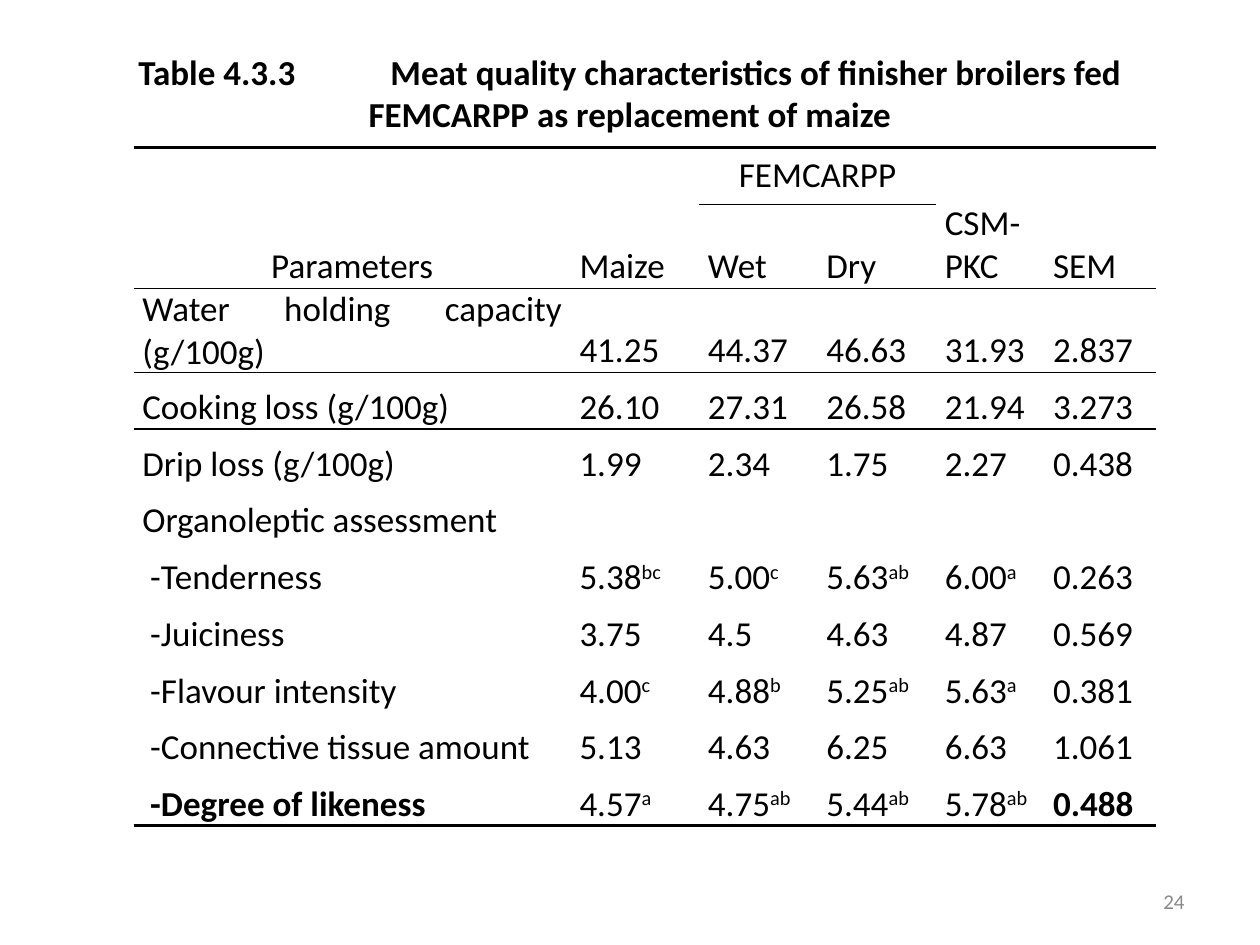
from lxml.etree import SubElement as Sub
from pptx import Presentation
from pptx.dml.color import RGBColor as RGB
from pptx.enum.text import MSO_ANCHOR as Anchor, PP_ALIGN as Align
from pptx.oxml.ns import qn
from pptx.util import Inches, Pt

BLACK = RGB(0, 0, 0)
GREY = RGB(0x89, 0x89, 0x89)
WHITE = RGB(255, 255, 255)
PLAIN = "{2D5ABB26-0587-4C30-8999-92F81FD0307C}"
THIN, MID, THICK = 0.75, 1, 2

WIDTHS = [3.47, 1.02, 0.94, 0.94, 0.86, 0.89]
ROWS = [
    ["Parameters", "Maize", "FEMCARPP", "", "CSM-PKC", "SEM"],
    ["", "", "Wet", "Dry", "", ""],
    ["Water holding capacity (g/100g)", "41.25", "44.37", "46.63", "31.93", "2.837"],
    ["Cooking loss (g/100g)", "26.10", "27.31", "26.58", "21.94", "3.273"],
    ["Drip loss (g/100g)", "1.99", "2.34", "1.75", "2.27", "0.438"],
    ["Organoleptic assessment", "", "", "", "", ""],
    [" -Tenderness", "5.38^bc", "5.00^c", "5.63^ab", "6.00^a", "0.263"],
    [" -Juiciness", "3.75", "4.5", "4.63", "4.87", "0.569"],
    [" -Flavour intensity", "4.00^c", "4.88^b", "5.25^ab", "5.63^a", "0.381"],
    [" -Connective tissue amount", "5.13", "4.63", "6.25", "6.63", "1.061"],
    [" -Degree of likeness", "4.57^a", "4.75^ab", "5.44^ab", "5.78^ab", "0.488"],
]
SPANS = [(0, c, 1, c) for c in (0, 1, 4, 5)] + [(0, 2, 0, 3), (5, 0, 5, 2)]
EDGES = {
    0: {"lnT": THICK, "lnB": THIN},
    1: {"lnT": THIN, "lnB": THIN},
    2: {"lnT": THIN, "lnB": MID},
    3: {"lnT": MID},
    10: {"lnB": THICK},
}


def write(frame, text, size=20, color=BLACK, bold=False, align=Align.JUSTIFY, tab=None):
    par = frame.paragraphs[0]
    par.alignment = align
    if tab:
        stops = Sub(par._p.get_or_add_pPr(), qn("a:tabLst"))
        Sub(stops, qn("a:tab"), pos=str(Inches(tab)), algn="l")
    base, _, mark = text.partition("^")
    for part, level in ((base, None), (mark, "30000")):
        if part:
            run = par.add_run()
            run.text = part
            font = run.font
            font.name, font.size, font.bold = "Calibri", Pt(size), bold
            font.color.rgb = color
            if level:
                run._r.get_or_add_rPr().set("baseline", level)


def rule(cell, side, width):
    line = Sub(cell._tc.get_or_add_tcPr(), qn("a:" + side), w=str(Pt(width)))
    fill = Sub(line, qn("a:solidFill"))
    Sub(fill, qn("a:srgbClr"), val=str(BLACK))


class Page:
    def __init__(self, deck):
        self.slide = deck.slides.add_slide(deck.slide_layouts[6])
        self.shapes = self.slide.shapes

    def text(self, text, left, top, width, height, **style):
        box = self.shapes.add_textbox(
            Inches(left), Inches(top), Inches(width), Inches(height))
        frame = box.text_frame
        frame.word_wrap = True
        frame.vertical_anchor = Anchor.MIDDLE
        write(frame, text, **style)

    def table(self, left, top, step):
        frame = self.shapes.add_table(
            len(ROWS), len(WIDTHS), Inches(left), Inches(top),
            Inches(sum(WIDTHS)), Inches(step * len(ROWS)))
        grid = frame.table
        grid.first_row = grid.horz_banding = False
        grid._tbl.tblPr.find(qn("a:tableStyleId")).text = PLAIN
        for col, width in zip(grid.columns, WIDTHS):
            col.width = Inches(width)
        for row in grid.rows:
            row.height = Inches(step)
        for r1, c1, r2, c2 in SPANS:
            grid.cell(r1, c1).merge(grid.cell(r2, c2))
        for r, row in enumerate(ROWS):
            for c, text in enumerate(row):
                self.cell(grid.cell(r, c), text, r, c)

    def cell(self, cell, text, r, c):
        head = text in ("Parameters", "FEMCARPP")
        cell.margin_left = cell.margin_right = Inches(0.07)
        cell.margin_top = cell.margin_bottom = 0
        cell.vertical_anchor = Anchor.MIDDLE if text == "FEMCARPP" else Anchor.BOTTOM
        for side, width in EDGES.get(r, {}).items():
            rule(cell, side, width)
        cell.fill.solid()
        cell.fill.fore_color.rgb = WHITE
        write(cell.text_frame, text, bold=r == len(ROWS) - 1 and c in (0, 5),
              align=Align.CENTER if head else Align.JUSTIFY)


def main():
    deck = Presentation()
    deck.slide_width, deck.slide_height = Inches(10), Inches(7.5)
    page = Page(deck)
    page.text("Table 4.3.3\tMeat quality characteristics of finisher broilers fed "
              "FEMCARPP as replacement of maize",
              0.5, 0.3, 9, 0.87, bold=True, align=Align.CENTER, tab=2)
    page.table(1.06, 1.17, 0.45)
    page.text("24", 7.17, 6.95, 2.33, 0.4, size=12, color=GREY, align=Align.RIGHT)
    deck.save("out.pptx")


if __name__ == "__main__":
    main()
